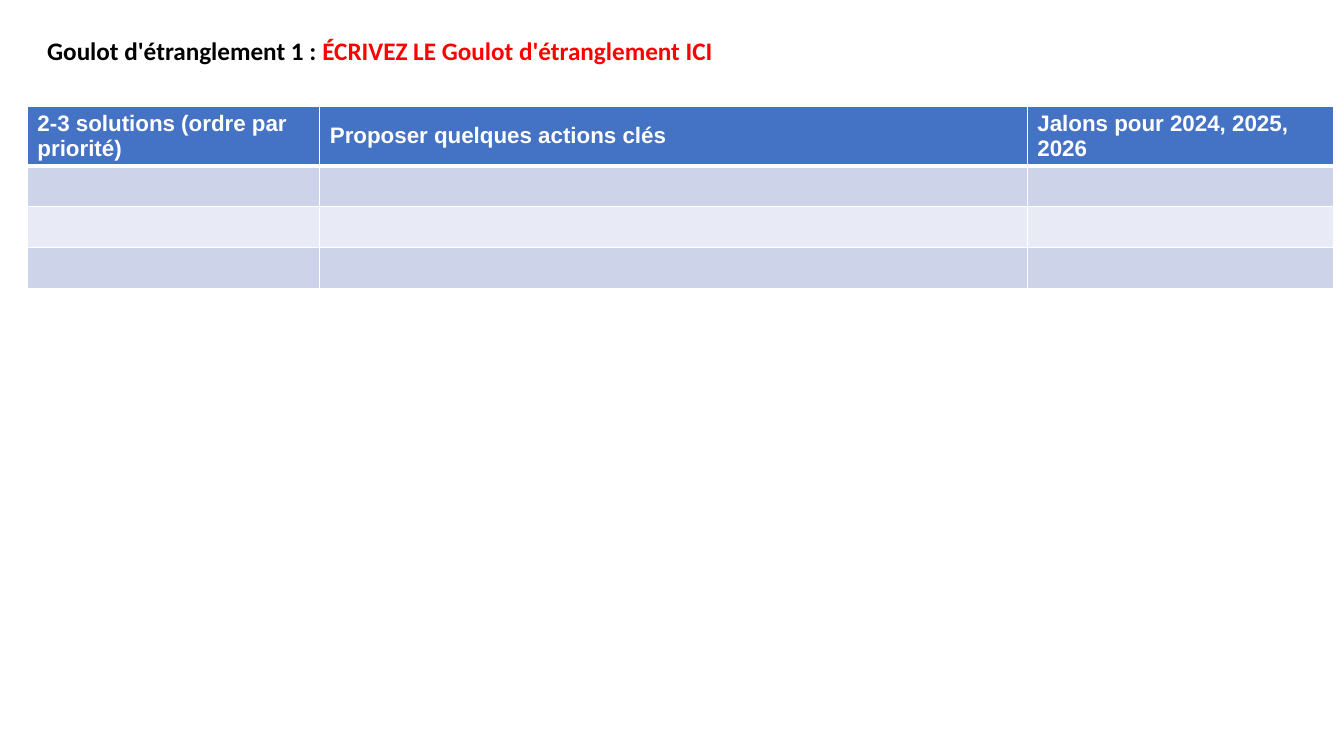
from lxml.etree import SubElement
from pptx import Presentation
from pptx.dml.color import RGBColor
from pptx.enum.text import MSO_ANCHOR
from pptx.oxml.ns import qn
from pptx.util import Cm, Pt

COLORS = {
    "black": "000000",
    "red": "FF0000",
    "white": "FFFFFF",
    "header": "4472C4",
    "band_dark": "CDD4EA",
    "band_light": "E8EBF5",
}
HEADINGS = [
    "2-3 solutions (ordre par priorité)",
    "Proposer quelques actions clés",
    "Jalons pour 2024, 2025, 2026",
]
COLUMN_WIDTHS = [7.37, 17.83, 7.72]
ROW_FILLS = ["header", "band_dark", "band_light", "band_dark"]
ROW_HEIGHT = 1.03


def add_text(paragraph, text, size=16, font="Arial", color="white", bold=True):
    run = paragraph.add_run()
    run.text = text
    run.font.size = Pt(size)
    run.font.name = font
    run.font.bold = bold
    run.font.color.rgb = RGBColor.from_string(COLORS[color])


def add_title(slide):
    title = slide.shapes.add_textbox(Cm(0.94), Cm(-0.51), Cm(33.12), Cm(3.68))
    frame = title.text_frame
    frame.word_wrap = True
    frame.vertical_anchor = MSO_ANCHOR.MIDDLE
    line = frame.paragraphs[0]
    line.line_spacing = 0.9
    add_text(line, "Goulot d'étranglement 1 : ", size=18, font="Calibri", color="black")
    add_text(line, "ÉCRIVEZ LE Goulot d'étranglement ICI ", size=18, font="Calibri", color="red")


def set_borders(cell, top=1, bottom=1):
    properties = cell._tc.get_or_add_tcPr()
    for side, width in (("L", 1), ("R", 1), ("T", top), ("B", bottom)):
        border = SubElement(properties, qn(f"a:ln{side}"), w=str(Pt(width)))
        fill = SubElement(border, qn("a:solidFill"))
        SubElement(fill, qn("a:srgbClr"), val=COLORS["white"])


def style_cell(cell, fill, **borders):
    set_borders(cell, **borders)
    cell.fill.solid()
    cell.fill.fore_color.rgb = RGBColor.from_string(COLORS[fill])


def add_solutions_table(slide):
    solutions = slide.shapes.add_table(
        len(ROW_FILLS), len(HEADINGS), Cm(0.69), Cm(2.67),
        Cm(sum(COLUMN_WIDTHS)), Cm(ROW_HEIGHT * len(ROW_FILLS)),
    ).table
    for column, width in zip(solutions.columns, COLUMN_WIDTHS):
        column.width = Cm(width)
    for index, (row, fill) in enumerate(zip(solutions.rows, ROW_FILLS)):
        row.height = Cm(ROW_HEIGHT)
        for cell in row.cells:
            style_cell(cell, fill, top=3 if index == 1 else 1, bottom=3 if index == 0 else 1)
    for cell, heading in zip(solutions.rows[0].cells, HEADINGS):
        cell.vertical_anchor = MSO_ANCHOR.MIDDLE
        add_text(cell.text_frame.paragraphs[0], heading)


def main():
    presentation = Presentation()
    presentation.slide_width = Cm(33.87)
    presentation.slide_height = Cm(19.05)
    slide = presentation.slides.add_slide(presentation.slide_layouts[6])
    add_solutions_table(slide)
    add_title(slide)
    presentation.save("out.pptx")


if __name__ == "__main__":
    main()
